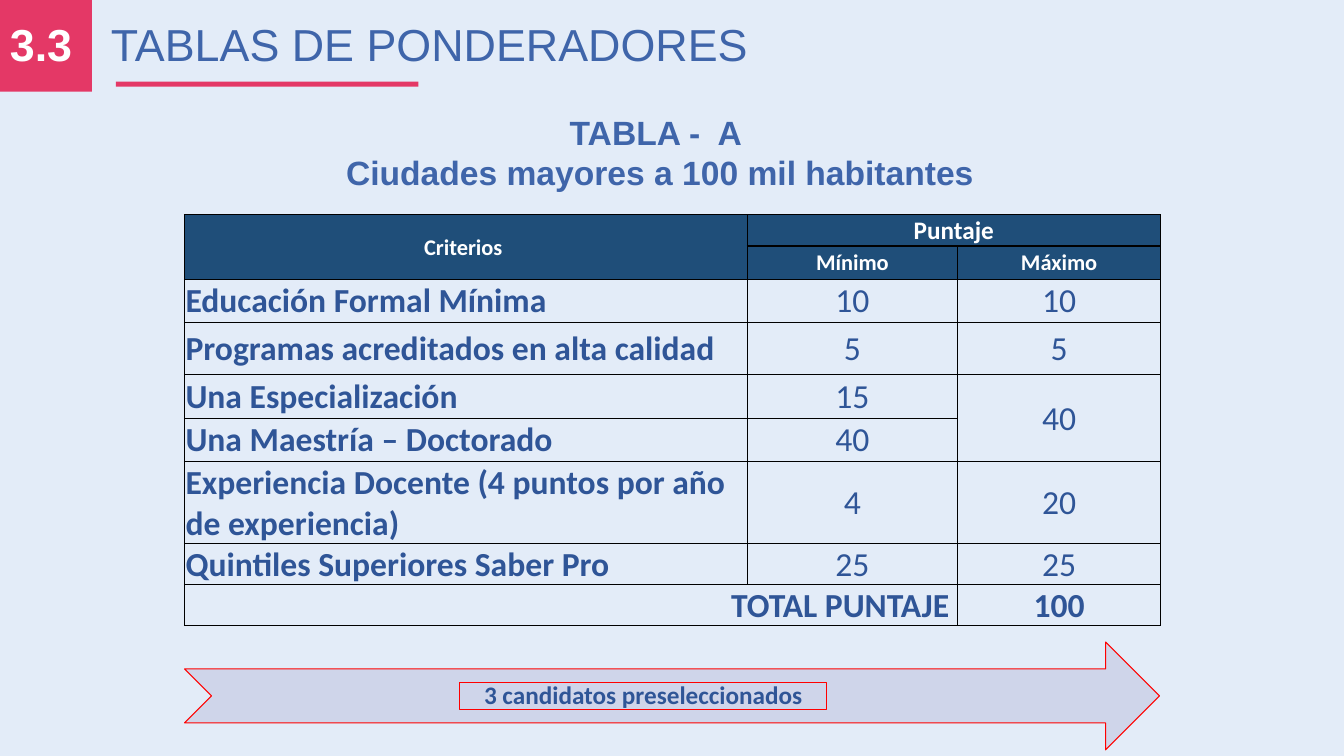
from lxml import etree
from pptx import Presentation
from pptx.dml.color import RGBColor
from pptx.enum.shapes import MSO_SHAPE
from pptx.enum.text import MSO_ANCHOR, MSO_AUTO_SIZE, PP_ALIGN
from pptx.oxml.ns import qn
from pptx.util import Inches, Pt

RECT = MSO_SHAPE.RECTANGLE
ARROW = MSO_SHAPE.NOTCHED_RIGHT_ARROW
LEFT, MID, RIGHT = PP_ALIGN.LEFT, PP_ALIGN.CENTER, PP_ALIGN.RIGHT
TOP, CENTER = MSO_ANCHOR.TOP, MSO_ANCHOR.MIDDLE
FIXED = MSO_AUTO_SIZE.NONE

WIDE, HIGH = Inches(13.33), Inches(7.5)
PINK, BLUE, NAVY, INK = "E43866", "3F65AA", "1F4E79", "2F5597"
WHITE, BLACK, RED, PALE, SKY = "FFFFFF", "000000", "FF0000", "CFD5EA", "E3ECF8"

COLS = [41.86, 15.68, 15.08]
ROWS = [4, 4.4, 5.73, 6.93, 5.73, 5.73, 10.8, 5.47, 5.47]
HEAD = [("Criterios ", "Puntaje", ""), ("", "Mínimo", "Máximo")]
BODY = [
    ("Educación Formal Mínima", "10", "10"),
    ("Programas acreditados en alta calidad", "5", "5"),
    ("Una Especialización", "15", "40"),
    ("Una Maestría – Doctorado", "40", ""),
    ("Experiencia Docente (4 puntos por año de experiencia)", "4", "20"),
    ("Quintiles Superiores Saber Pro", "25", "25"),
    ("TOTAL PUNTAJE\u00a0", "", "100"),
]
SPANS = [(0, 0, 1, 0), (0, 1, 0, 2), (4, 2, 5, 2), (8, 0, 8, 1)]


def across(share):
    return round(WIDE * share / 100)


def down(share):
    return round(HIGH * share / 100)


def area(x, y, w, h):
    return across(x), down(y), across(w), down(h)


def paint(color, tone):
    color.rgb = RGBColor.from_string(tone)


def fill(item, tone):
    if tone:
        item.fill.solid()
        paint(item.fill.fore_color, tone)
    else:
        item.fill.background()


def write(frame, lines, size, tone, face="Arial", bold=False, align=LEFT):
    frame.word_wrap = True
    for i, line in enumerate(lines):
        para = frame.add_paragraph() if i else frame.paragraphs[0]
        para.alignment = align
        run = para.add_run()
        run.text = line
        font = run.font
        font.size, font.name, font.bold = Pt(size), face, bold
        paint(font.color, tone)


def inset(item, gap):
    item.margin_left = item.margin_right = Inches(gap)
    item.margin_top = item.margin_bottom = Inches(gap)


def shape(slide, kind, box, tone=None, edge=None):
    item = slide.shapes.add_shape(kind, *area(*box))
    item.shadow.inherit = False
    fill(item, tone)
    if edge:
        paint(item.line.color, edge)
        item.line.width = Pt(0.75)
    else:
        item.line.fill.background()
    return item


def label(slide, box, lines, size, tone, align=LEFT):
    item = slide.shapes.add_textbox(*area(*box))
    write(item.text_frame, lines, size, tone, bold=True, align=align)


def title(slide, box, text):
    item = slide.shapes.title
    item.left, item.top, item.width, item.height = area(*box)
    frame = item.text_frame
    frame.auto_size, frame.vertical_anchor = FIXED, TOP
    write(frame, [text], 32, BLUE)


def border(cell):
    props = cell._tc.get_or_add_tcPr()
    for i, side in enumerate(("a:lnL", "a:lnR", "a:lnT", "a:lnB")):
        line = etree.Element(qn(side), w=str(Pt(1)))
        solid = etree.SubElement(line, qn("a:solidFill"))
        etree.SubElement(solid, qn("a:srgbClr"), val=BLACK)
        props.insert(i, line)


def look(row, col):
    if row < len(HEAD):
        return 18 if (row, col) == (0, 1) else 16, WHITE, True, MID
    last = row == len(ROWS) - 1
    align = MID if col else RIGHT if last else LEFT
    return 24, INK, col == 0 or last, align


def scores(slide):
    box = area(13.73, 28.4, sum(COLS), sum(ROWS))
    table = slide.shapes.add_table(len(ROWS), len(COLS), *box).table
    table.first_row = table.horz_banding = False
    for col, share in zip(table.columns, COLS):
        col.width = across(share)
    for row, share in zip(table.rows, ROWS):
        row.height = down(share)
    for r, texts in enumerate(HEAD + BODY):
        for c, text in enumerate(texts):
            cell = table.cell(r, c)
            inset(cell, 0.01)
            cell.margin_bottom = 0
            cell.vertical_anchor = CENTER
            fill(cell, NAVY if r < len(HEAD) else None)
            border(cell)
            if text:
                size, tone, bold, align = look(r, c)
                write(cell.text_frame, [text], size, tone, "Calibri", bold, align)
    for r, c, end, edge in SPANS:
        table.cell(r, c).merge(table.cell(end, edge))


def result(slide):
    shape(slide, ARROW, (13.73, 84.93, 72.54, 14.27), PALE, RED)
    note = shape(slide, RECT, (34.21, 90.27, 27.31, 3.6), edge=RED)
    frame = note.text_frame
    inset(frame, 0.14)
    frame.vertical_anchor = CENTER
    write(frame, ["3 candidatos preseleccionados"], 18, INK, "Calibri", True, MID)
    frame.paragraphs[0].line_spacing = 0.9


def main():
    deck = Presentation()
    deck.slide_width, deck.slide_height = WIDE, HIGH
    slide = deck.slides.add_slide(deck.slide_layouts[5])
    fill(slide.background, SKY)
    shape(slide, RECT, (0, 0, 6.83, 12.13), PINK)
    label(slide, (0, 1.6, 7.13, 8.53), ["3.3"], 32, WHITE)
    title(slide, (7.5, 1.6, 87.4, 8.53), "TABLAS DE PONDERADORES")
    scores(slide)
    heads = ["TABLA -  A ", "Ciudades mayores a 100 mil habitantes"]
    label(slide, (24.38, 14.13, 49.44, 12.13), heads, 24, BLUE, MID)
    shape(slide, RECT, (8.63, 10.8, 22.5, 0.67), PINK)
    result(slide)
    deck.save("out.pptx")


if __name__ == "__main__":
    main()
